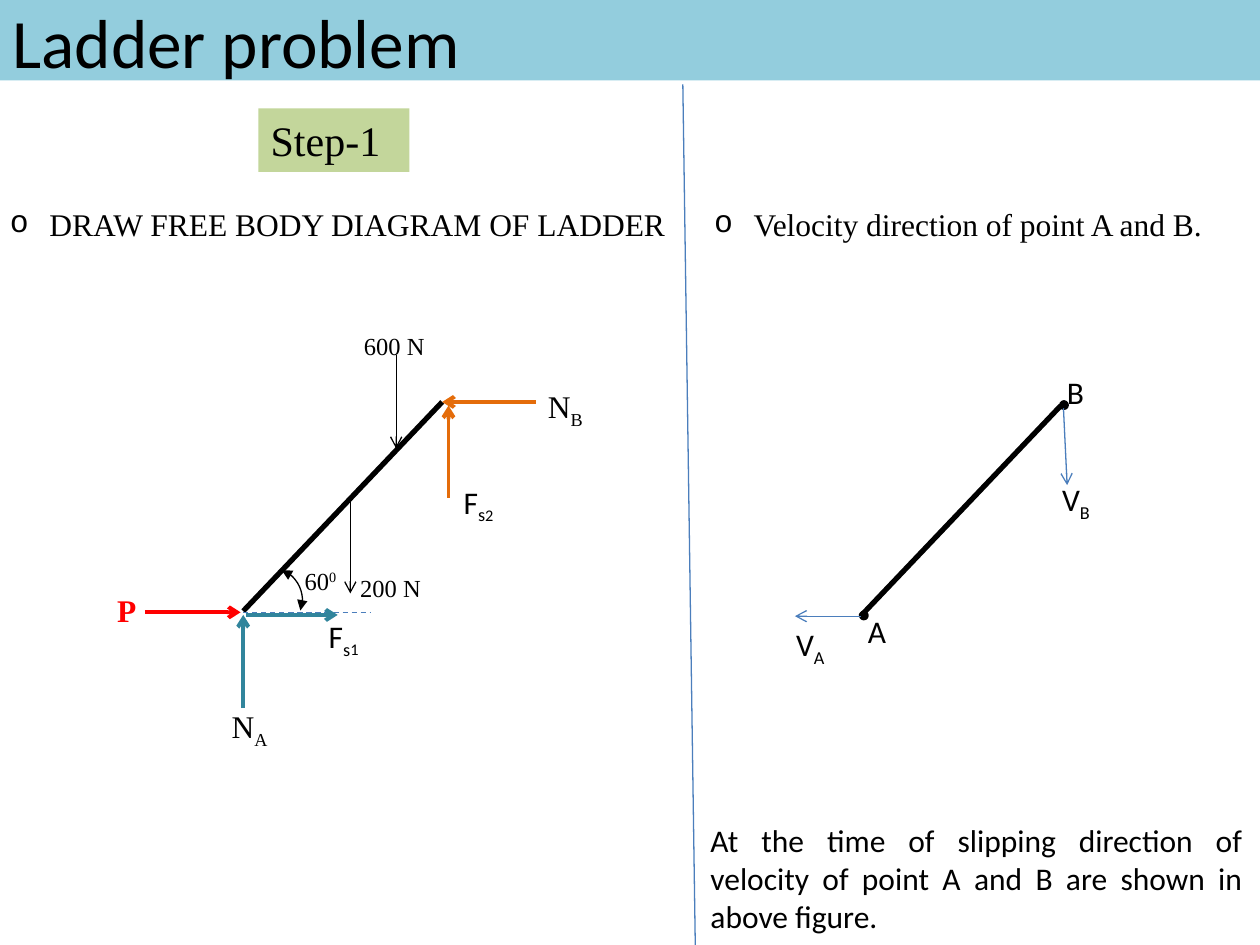
"""Build the ladder problem slide with its free body and velocity diagrams."""
from lxml.etree import SubElement
from pptx import Presentation
from pptx.dml.color import RGBColor
from pptx.enum.dml import MSO_LINE
from pptx.enum.shapes import MSO_CONNECTOR, MSO_SHAPE
from pptx.enum.text import MSO_ANCHOR, MSO_AUTO_SIZE, PP_ALIGN
from pptx.oxml.ns import qn
from pptx.util import Pt

BLACK = RGBColor(0x00, 0x00, 0x00)
RED = RGBColor(0xFF, 0x00, 0x00)
SKY = RGBColor(0x93, 0xCD, 0xDD)
GREEN = RGBColor(0xC3, 0xD6, 0x9B)
BLUE = RGBColor(0x4B, 0x7E, 0xBC)
ORANGE = RGBColor(0xE4, 0x6C, 0x0A)
TEAL = RGBColor(0x31, 0x85, 0x9C)
SERIF = "Times New Roman"
SANS = "Calibri"


class SlideBuilder:
    """Hold the text style and the current slide."""

    def __init__(self, slide, size=18, color=BLACK):
        self.slide = slide
        self.size = size
        self.color = color

    def add_run(self, paragraph, text, font, size=None, color=None, bold=False, baseline=0):
        run = paragraph.add_run()
        run.text = text
        run.font.name = font
        run.font.size = Pt(size or self.size)
        run.font.bold = bold
        run.font.color.rgb = color or self.color
        if baseline:
            run._r.get_or_add_rPr().set("baseline", str(baseline * 1000))

    def text(self, left, top, width, height, text, font, script="", baseline=-25,
             script_end="", bullet=False, align=PP_ALIGN.LEFT, **style):
        box = self.slide.shapes.add_textbox(Pt(left), Pt(top), Pt(width), Pt(height))
        frame = box.text_frame
        frame.word_wrap = True
        frame.auto_size = MSO_AUTO_SIZE.SHAPE_TO_FIT_TEXT
        paragraph = frame.paragraphs[0]
        paragraph.alignment = align
        if bullet:
            properties = paragraph._p.get_or_add_pPr()
            properties.set("marL", str(Pt(22.5)))
            properties.set("indent", str(-Pt(22.5)))
            SubElement(properties, qn("a:buFont"), typeface="Courier New")
            SubElement(properties, qn("a:buChar"), char="o")
        self.add_run(paragraph, text, font, **style)
        if script:
            self.add_run(paragraph, script, font, baseline=baseline, **style)
        if script_end:
            self.add_run(paragraph, script_end, font, size=16, baseline=baseline)

    def banner(self, left, top, width, height, fill, text, font, size):
        shape = self.slide.shapes.add_shape(
            MSO_SHAPE.RECTANGLE, Pt(left), Pt(top), Pt(width), Pt(height))
        shape.shadow.inherit = False
        shape.fill.solid()
        shape.fill.fore_color.rgb = fill
        shape.line.fill.background()
        frame = shape.text_frame
        frame.word_wrap = True
        frame.vertical_anchor = MSO_ANCHOR.MIDDLE
        paragraph = frame.paragraphs[0]
        paragraph.alignment = PP_ALIGN.LEFT
        self.add_run(paragraph, text, font, size)

    def line(self, start, end, color, width=0.75, arrow=False, dashed=False):
        connector = self.slide.shapes.add_connector(
            MSO_CONNECTOR.STRAIGHT, *(Pt(value) for value in start + end))
        connector.line.color.rgb = color
        connector.line.width = Pt(width)
        if dashed:
            connector.line.dash_style = MSO_LINE.DASH
        if arrow:
            SubElement(connector.line._get_or_add_ln(), qn("a:tailEnd"), type="arrow")
        SubElement(connector._element.spPr, qn("a:effectLst"))

    def angle_arc(self, left, top, diameter, rotation):
        arc = self.slide.shapes.add_shape(
            MSO_SHAPE.ARC, Pt(left), Pt(top), Pt(diameter), Pt(diameter))
        arc.rotation = rotation
        arc.fill.background()
        arc.line.color.rgb = BLACK
        arc.line.width = Pt(0.75)
        for end in ("a:headEnd", "a:tailEnd"):
            SubElement(arc.line._get_or_add_ln(), qn(end), type="triangle")
        arc.shadow.inherit = False

    def dot(self, left, top, diameter=3.6):
        dot = self.slide.shapes.add_shape(
            MSO_SHAPE.OVAL, Pt(left), Pt(top), Pt(diameter), Pt(diameter))
        dot.shadow.inherit = False
        dot.fill.solid()
        dot.fill.fore_color.rgb = BLACK
        dot.line.color.rgb = BLACK
        dot.line.width = Pt(2)


def add_headings(builder):
    """Add the title, step label, bullets, divider and closing remark."""
    builder.banner(0, 0, 720, 46, SKY, "Ladder problem", SANS, 39.6)
    builder.banner(147.6, 61.9, 86.4, 36.3, GREEN, "Step-1", SERIF, 24)
    builder.text(-1.4, 113.8, 403, 29, "DRAW FREE BODY DIAGRAM OF LADDER", SERIF, bullet=True)
    builder.text(401, 113.8, 295, 29, "Velocity direction of point A and B.", SERIF, bullet=True)
    builder.line((390.2, 48.2), (397.4, 546), BLUE)
    builder.text(398.9, 465.8, 318.2, 72.7,
                 "At the time of slipping direction of velocity of point A and B "
                 "are shown in above figure.", SANS, align=PP_ALIGN.JUSTIFY)


def add_free_body_diagram(builder):
    """Add the ladder with its loads, reactions and friction forces."""
    builder.line((139, 349.2), (252.7, 229.7), BLACK, 3)
    builder.angle_arc(136.8, 324.7, 36, 20.2)
    builder.line((139, 349.9), (211.7, 349.9), BLUE, dashed=True)
    for x, top in ((200.2, 285.8), (226.4, 203)):
        builder.line((x, top), (x, top + 53.3), BLACK, arrow=True)
    forces = (
        ((82.8, 349.9), (137.5, 349.9), RED),
        ((306, 229.7), (252.7, 229.7), ORANGE),
        ((256.3, 284.4), (256.3, 231.8), ORANGE),
        ((139, 404.6), (139, 351.4), TEAL),
        ((140.4, 351.4), (193, 351.4), TEAL),
    )
    for start, end, color in forces:
        builder.line(start, end, color, 2.25, arrow=True)
    builder.text(167, 319.7, 44.6, 24.2, "60", SERIF, "0", 30, size=14)
    builder.text(198.7, 324, 59, 24.2, "200 N", SERIF, size=14)
    builder.text(200.9, 185.8, 59, 24.2, "600 N", SERIF, size=14)
    builder.text(59.8, 334.1, 59, 29, "P", SERIF, color=RED, bold=True)
    builder.text(306, 217.4, 59, 29, "N", SERIF, "B")
    builder.text(125.3, 400.3, 59, 29, "N", SERIF, "A")
    builder.text(257.8, 272.2, 44.6, 29, "F", SANS, "s", script_end="2")
    builder.text(180.7, 349.2, 44.6, 29, "F", SANS, "s", script_end="1")


def add_velocity_diagram(builder):
    """Add the ladder with the velocities of its end points."""
    builder.line((491.8, 352.1), (606.2, 231.8), BLACK, 3)
    builder.dot(606.2, 229.7)
    builder.dot(491.8, 349.9)
    builder.line((607.7, 233.3), (609.8, 277.2), BLUE, arrow=True)
    builder.line((491.8, 352.1), (454.3, 352.1), BLUE, arrow=True)
    labels = (
        (599.8, 270.7, "V", "B"),
        (447.8, 353.5, "V", "A"),
        (488.9, 346.3, "A", ""),
        (602.6, 209.5, "B", ""),
    )
    for left, top, letter, subscript in labels:
        builder.text(left, top, 44.6, 29, letter, SANS, subscript)


def main():
    """Build and save the presentation."""
    presentation = Presentation()
    presentation.slide_width = Pt(720)
    presentation.slide_height = Pt(540)
    builder = SlideBuilder(presentation.slides.add_slide(presentation.slide_layouts[6]))
    add_headings(builder)
    add_free_body_diagram(builder)
    add_velocity_diagram(builder)
    presentation.save("out.pptx")


if __name__ == "__main__":
    main()
